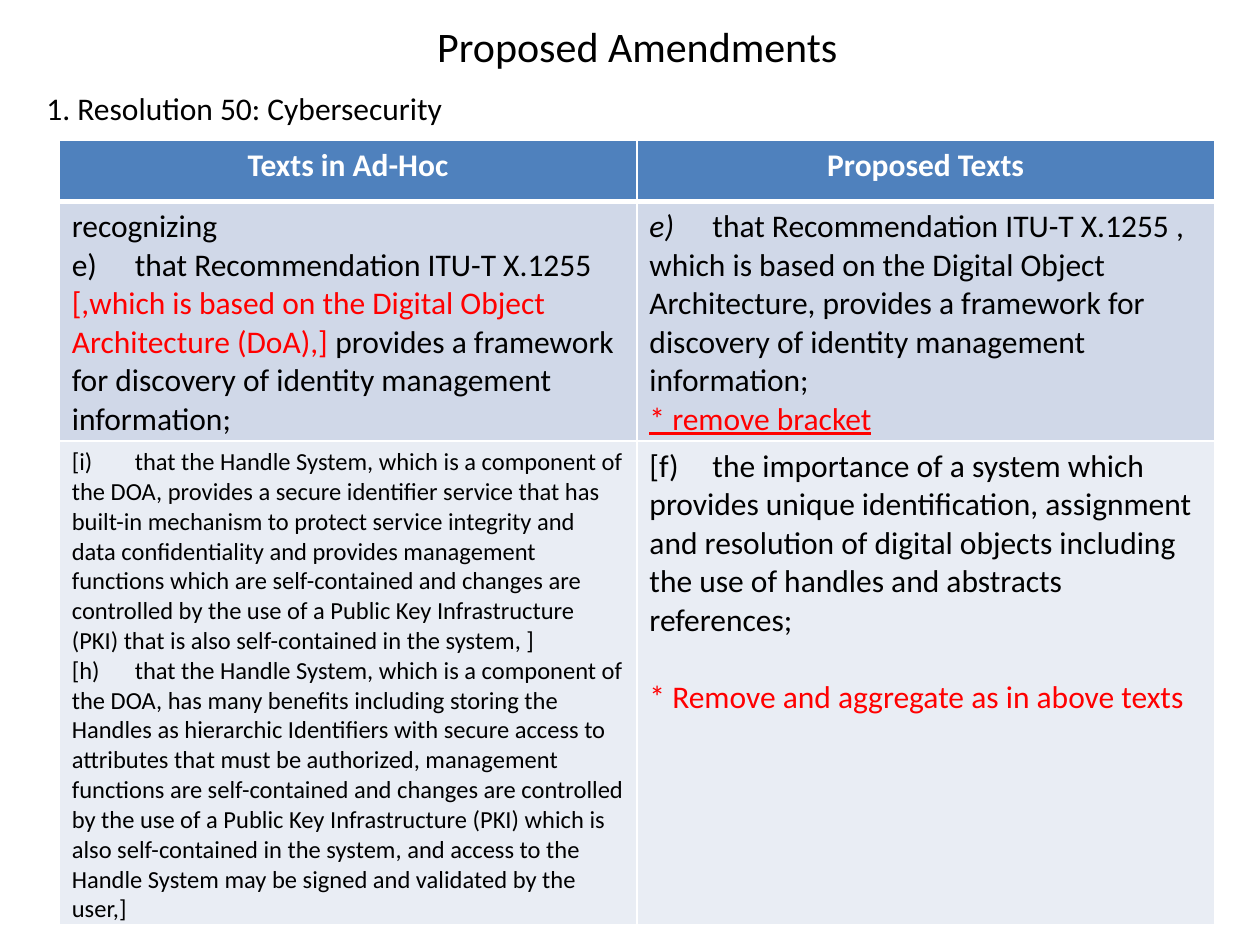
from lxml.etree import SubElement
from pptx import Presentation
from pptx.dml.color import RGBColor
from pptx.enum.text import MSO_ANCHOR, PP_ALIGN
from pptx.oxml.ns import qn
from pptx.util import Inches, Pt

THEME = {
    "font": "Calibri", "black": "000000", "white": "FFFFFF", "red": "FF0000",
    "head": "4F81BD", "bands": ["D0D8E8", "E9EDF4"],
    "title": 24, "body": 18, "small": 14, "thin": 1, "thick": 3,
}
RED = {"color": "red"}
SMALL = {"size": "small"}

TITLE = "Proposed Amendments"
TOPIC = "1. Resolution 50: Cybersecurity"
HEADS = ["Texts in Ad-Hoc", "Proposed Texts"]
# Each cell is a list of paragraphs; each paragraph is a list of (text, format) runs.
ROWS = [
    [
        [
            [("recognizing", {})],
            [("e)\tthat Recommendation ITU-T X.1255 ", {}),
             ("[,which is based on the Digital Object Architecture (DoA),]", RED),
             (" provides a framework for discovery of identity management information;", {})],
        ],
        [
            [("e)", {"italic": True}),
             ("\tthat Recommendation ITU-T X.1255 , which is based on the Digital Object "
              "Architecture, provides a framework for discovery of identity management "
              "information;", {})],
            [("* remove bracket", {"color": "red", "line": True})],
        ],
    ],
    [
        [
            [("[i)\tthat the Handle System, which is a component of the DOA, provides a secure "
              "identifier service that has built-in mechanism to protect service integrity and "
              "data confidentiality and provides management functions which are self-contained "
              "and changes are controlled by the use of a Public Key Infrastructure (PKI) that "
              "is also self-contained in the system, ]", SMALL)],
            [("[h)\tthat the Handle System, which is a component of the DOA, has many benefits "
              "including storing the Handles as hierarchic Identifiers with secure access to "
              "attributes that must be authorized, management functions are self-contained and "
              "changes are controlled by the use of a Public Key Infrastructure (PKI) which is "
              "also self-contained in the system, and access to the Handle System may be signed "
              "and validated by the user,]", SMALL)],
        ],
        [
            [("[f)\tthe importance of a system which provides unique identification, assignment "
              "and resolution of digital objects including the use of handles and abstracts "
              "references;", {})],
            [("* Remove and aggregate as in above texts", {"color": "red", "gap": 22})],
        ],
    ],
]
TABLE = (0.47, 1.11, 9.17)
HEIGHTS = [0.49, 1.88, 3.83]
TAB = 0.5


def write(para, text, size="body", color="black", bold=False, italic=False,
          line=False, gap=0, align=PP_ALIGN.LEFT):
    """Add one formatted run to a paragraph."""
    para.alignment = align
    if gap:
        para.space_before = Pt(gap)
    run = para.add_run()
    run.text = text
    font = run.font
    font.name, font.size = THEME["font"], Pt(THEME[size])
    font.color.rgb = RGBColor.from_string(THEME[color])
    font.bold, font.italic, font.underline = bold, italic, line


def set_tab(para):
    stops = SubElement(para._p.get_or_add_pPr(), qn("a:tabLst"))
    SubElement(stops, qn("a:tab"), pos=str(Inches(TAB)), algn="l")


def style(cell, fill, top, bottom):
    """Rule a cell in white, then fill it."""
    props = cell._tc.get_or_add_tcPr()
    for side, width in zip("LRTB", ("thin", "thin", top, bottom)):
        edge = SubElement(props, qn("a:ln" + side), w=str(Pt(THEME[width])))
        SubElement(SubElement(edge, qn("a:solidFill")), qn("a:srgbClr"), val=THEME["white"])
    cell.fill.solid()
    cell.fill.fore_color.rgb = RGBColor.from_string(fill)


def add_grid(slide):
    left, top, width = map(Inches, TABLE)
    grid = slide.shapes.add_table(len(HEIGHTS), len(HEADS), left, top, width,
                                  Inches(sum(HEIGHTS))).table
    for row, height in zip(grid.rows, HEIGHTS):
        row.height = Inches(height)
    for col, head in enumerate(HEADS):
        cell = grid.cell(0, col)
        style(cell, THEME["head"], "thin", "thick")
        write(cell.text_frame.paragraphs[0], head, color="white", bold=True,
              align=PP_ALIGN.CENTER)
    for num, row in enumerate(ROWS, 1):
        for col, paras in enumerate(row):
            cell = grid.cell(num, col)
            style(cell, THEME["bands"][num - 1], "thick" if num == 1 else "thin", "thin")
            frame = cell.text_frame
            for pos, runs in enumerate(paras):
                para = frame.add_paragraph() if pos else frame.paragraphs[0]
                if any("\t" in text for text, _ in runs):
                    set_tab(para)
                for text, form in runs:
                    write(para, text, **form)


def main():
    deck = Presentation()
    deck.slide_width, deck.slide_height = Inches(10), Inches(7.5)
    slide = deck.slides.add_slide(deck.slide_layouts[5])

    title = slide.shapes.title
    title.left, title.top = Inches(3.37), Inches(0.11)
    title.width, title.height = Inches(3.41), Inches(0.5)
    title.text_frame.word_wrap = False
    title.text_frame.vertical_anchor = MSO_ANCHOR.TOP
    write(title.text_frame.paragraphs[0], TITLE, size="title")

    topic = slide.shapes.add_textbox(Inches(0.27), Inches(0.66), Inches(3.38), Inches(0.4))
    topic.text_frame.word_wrap = False
    write(topic.text_frame.paragraphs[0], TOPIC)

    add_grid(slide)
    deck.save("out.pptx")


if __name__ == "__main__":
    main()
